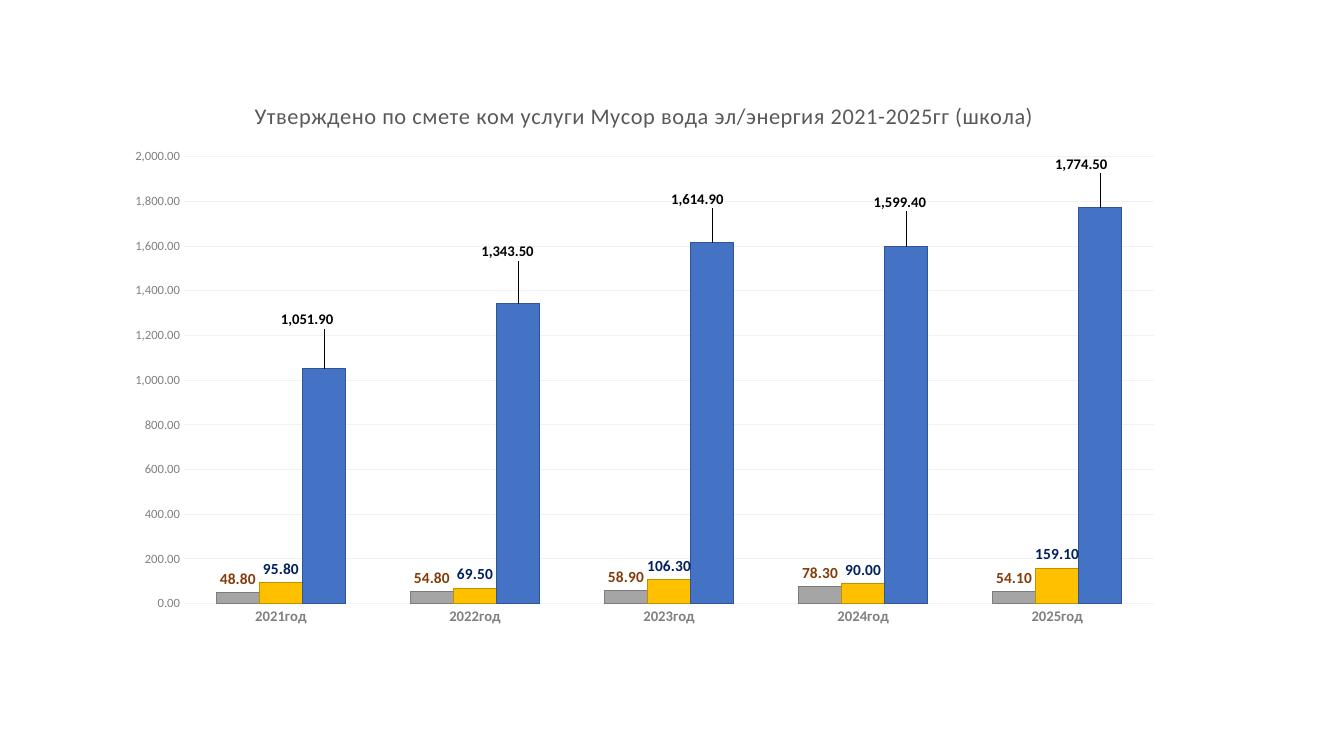
"""Builds a slide with a column chart of approved utility costs for a school."""

from dataclasses import dataclass

from pptx import Presentation
from pptx.chart.axis import _BaseAxis
from pptx.chart.chart import Chart
from pptx.chart.data import CategoryChartData
from pptx.chart.series import BarSeries
from pptx.dml.color import RGBColor
from pptx.enum.chart import XL_CHART_TYPE, XL_LABEL_POSITION, XL_TICK_MARK
from pptx.oxml import parse_xml
from pptx.oxml.ns import nsdecls
from pptx.slide import Slide
from pptx.text.text import Font
from pptx.util import Inches, Pt


@dataclass(frozen=True)
class Theme:
    font: str = "Calibri"
    title_color: str = "595959"
    axis_color: str = "808080"
    grid_color: str = "F2F2F2"
    title_size: float = 16
    category_size: float = 10.5
    value_size: float = 9
    line_width: float = 0.75
    number_format: str = "#,##0.00"


@dataclass(frozen=True)
class Cost:
    values: tuple[float, ...]
    fill: str
    line: str
    label_color: str = "000000"
    label_size: float = 10.5
    label_shifts: tuple[tuple[float, float], ...] = ()


THEME = Theme()
TITLE = "Утверждено по смете ком услуги Мусор вода эл/энергия 2021-2025гг (школа)"
YEARS = [f"{year}год" for year in range(2021, 2026)]
COSTS = (
    Cost((), "5B9BD5", "2E75B6"),
    Cost((), "ED7D31", "C55A11"),
    Cost((48.8, 54.8, 58.9, 78.3, 54.1), "A5A5A5", "7C7C7C", "843C0B", 11),
    Cost((95.8, 69.5, 106.3, 90, 159.1), "FFC000", "BF9000", "002060", 11),
    Cost(
        (1051.9, 1343.5, 1614.9, 1599.4, 1774.5), "4472C4", "2F5597",
        label_shifts=(
            (-0.016, -0.064), (-0.01, -0.069), (-0.014, -0.054), (-0.006, -0.055), (-0.018, -0.053),
        ),
    ),
)
HIDDEN_LEADERS = (
    f"<c:extLst {nsdecls('c')}>"
    '<c:ext uri="{CE6537A1-D6FC-4f65-9D91-7224C49458BB}"'
    ' xmlns:c15="http://schemas.microsoft.com/office/drawing/2012/chart">'
    '<c15:showLeaderLines val="0"/></c:ext></c:extLst>'
)


def format_font(font: Font, size: float, color: str, bold: bool = False) -> None:
    """Apply the theme font with a size, colour and weight."""
    for name, value in {"name": THEME.font, "size": Pt(size), "bold": bold}.items():
        setattr(font, name, value)
    font.color.rgb = RGBColor.from_string(color)


def manual_layout(**values: float | str) -> str:
    """Return the XML of a manual chart layout."""
    parts = "".join(f'<c:{name} val="{value}"/>' for name, value in values.items())
    return f"<c:layout {nsdecls('c')}><c:manualLayout>{parts}</c:manualLayout></c:layout>"


def format_title(chart: Chart) -> None:
    """Write the chart title with slightly spaced letters."""
    chart.has_title = True
    para = chart.chart_title.text_frame.paragraphs[0]
    span = para.add_run()
    span.text = TITLE
    format_font(span.font, THEME.title_size, THEME.title_color)
    span._r.get_or_add_rPr().set("spc", "50")
    chart.chart_title.include_in_layout = False


def format_axis(axis: _BaseAxis, size: float, bold: bool) -> None:
    """Remove the axis line and ticks and format the tick labels."""
    ticks = {"major_tick_mark": XL_TICK_MARK.NONE, "minor_tick_mark": XL_TICK_MARK.NONE}
    for name, value in ticks.items():
        setattr(axis, name, value)
    axis.format.line.fill.background()
    format_font(axis.tick_labels.font, size, THEME.axis_color, bold)


def format_labels(series: BarSeries, cost: Cost) -> None:
    """Show the values above the columns, shifted where the cost asks for it."""
    labels = series.data_labels
    label_format = {
        "show_value": True,
        "number_format": THEME.number_format,
        "number_format_is_linked": False,
        "position": XL_LABEL_POSITION.OUTSIDE_END,
    }
    for name, value in label_format.items():
        setattr(labels, name, value)
    format_font(labels.font, cost.label_size, cost.label_color, True)
    labels._element.append(parse_xml(HIDDEN_LEADERS))
    for index, (across, down) in enumerate(cost.label_shifts):
        label = series.points[index].data_label
        label.position = XL_LABEL_POSITION.OUTSIDE_END
        format_font(label.font, cost.label_size, cost.label_color, True)
        label._dLbl.insert(1, parse_xml(manual_layout(x=across, y=down)))


def format_series(series: BarSeries, cost: Cost) -> None:
    """Colour the columns and label them if they have values."""
    series.format.fill.solid()
    series.format.fill.fore_color.rgb = RGBColor.from_string(cost.fill)
    series.format.line.color.rgb = RGBColor.from_string(cost.line)
    series.format.line.width = Pt(THEME.line_width)
    if cost.values:
        format_labels(series, cost)


def add_cost_chart(page: Slide) -> None:
    """Add the clustered column chart to the page."""
    data = CategoryChartData(number_format=THEME.number_format)
    data.categories = YEARS
    for number, cost in enumerate(COSTS, 1):
        data.add_series(f"Series {number}", cost.values)
    chart = page.shapes.add_chart(
        XL_CHART_TYPE.COLUMN_CLUSTERED,
        Inches(1.13), Inches(0.8), Inches(10.53), Inches(5.51), data,
    ).chart
    format_font(chart.font, 10, "000000")
    chart.has_legend = False
    format_title(chart)

    plot = chart.plots[0]
    for name, value in {"gap_width": 150, "overlap": 0, "vary_by_categories": False}.items():
        setattr(plot, name, value)
    for series, cost in zip(plot.series, COSTS):
        format_series(series, cost)

    format_axis(chart.category_axis, THEME.category_size, True)
    amounts = chart.value_axis
    format_axis(amounts, THEME.value_size, False)
    scale = {"minimum_scale": 0, "maximum_scale": 2000, "major_unit": 200}
    for name, value in scale.items():
        setattr(amounts, name, value)
    amounts.tick_labels.number_format = THEME.number_format
    amounts.tick_labels.number_format_is_linked = False
    grid = amounts.major_gridlines.format.line
    grid.color.rgb = RGBColor.from_string(THEME.grid_color)
    grid.width = Pt(THEME.line_width)

    area = chart._chartSpace.chart.plotArea
    for layout in area.xpath("c:layout"):
        area.remove(layout)
    area.insert(0, parse_xml(manual_layout(
        layoutTarget="inner", xMode="edge", yMode="edge", x=0.066, y=0.137, w=0.914, h=0.805,
    )))


def main() -> None:
    """Build and save the deck."""
    deck = Presentation()
    deck.slide_width, deck.slide_height = Inches(13.33), Inches(7.5)
    add_cost_chart(deck.slides.add_slide(deck.slide_layouts[6]))
    deck.save("out.pptx")


if __name__ == "__main__":
    main()
